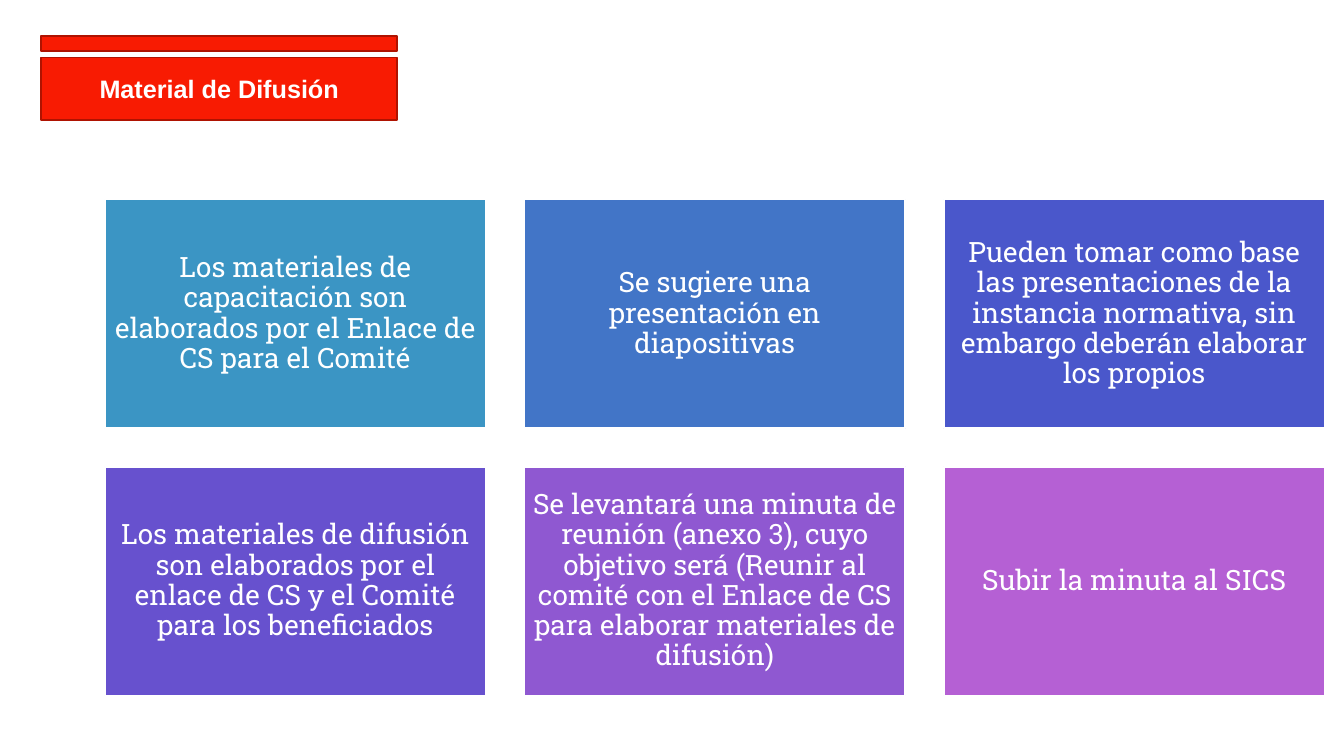
from pptx import Presentation
from pptx.dml.color import RGBColor
from pptx.enum import shapes, text
from pptx.util import Inches, Pt


def rgb(value):
    return RGBColor.from_string(value)


def add_box(slide, at, fill, line, content="", margin=0.1, spacing=1.0, **font):
    """Add a filled rectangle with centred text; at is left, top, width, height in inches."""
    sp = slide.shapes.add_shape(shapes.MSO_SHAPE.RECTANGLE, *map(Inches, at))
    sp.shadow.inherit = False
    sp.fill.solid()
    sp.fill.fore_color.rgb = rgb(fill)
    sp.line.color.rgb = rgb(line)
    sp.line.width = Pt(1.25)
    if content:
        tf = sp.text_frame
        tf.word_wrap = True
        tf.vertical_anchor = text.MSO_ANCHOR.MIDDLE
        for side in ("left", "top", "right", "bottom"):
            setattr(tf, f"margin_{side}", Inches(margin))
        p = tf.paragraphs[0]
        p.alignment = text.PP_ALIGN.CENTER
        p.line_spacing = spacing
        r = p.add_run()
        r.text = content
        r.font.color.rgb = rgb("FFFFFF")
        for name, value in font.items():
            setattr(r.font, name, value)


prs = Presentation()
prs.slide_width, prs.slide_height = Inches(13.33), Inches(7.5)
s = prs.slides.add_slide(prs.slide_layouts[6])

# Heading
RED, DARK_RED = "F81B02", "AF1301"
add_box(s, (0.41, 0.57, 3.53, 0.62), RED, DARK_RED, "Material de Difusión",
        name="Arial", size=Pt(18), bold=True)
add_box(s, (0.41, 0.36, 3.53, 0.15), RED, DARK_RED)

# Grid of cards, three to a row
cards = [
    ("3B95C4", "Los materiales de capacitación son elaborados por el Enlace de CS "
               "para el Comité"),
    ("4275C7", "Se sugiere una presentación en diapositivas"),
    ("4A57CB", "Pueden tomar como base las presentaciones de la instancia normativa, "
               "sin embargo deberán elaborar los propios"),
    ("6751CE", "Los materiales de difusión son elaborados por el enlace de CS y el "
               "Comité para los beneficiados"),
    ("8F58D1", "Se levantará una minuta de reunión (anexo 3), cuyo objetivo será "
               "(Reunir al comité con el Enlace de CS para elaborar materiales de "
               "difusión)"),
    ("B560D4", "Subir la minuta al SICS"),
]
COLUMNS, LEFT, TOP = 3, 1.04, 1.98
WIDTH, HEIGHT, GAP = 3.78, 2.27, 0.38
for i, (fill, content) in enumerate(cards):
    row, column = divmod(i, COLUMNS)
    at = (LEFT + column * (WIDTH + GAP), TOP + row * (HEIGHT + GAP), WIDTH, HEIGHT)
    add_box(s, at, fill, "FFFFFF", content, margin=0.08, spacing=0.9,
            name="Roboto Slab", size=Pt(20))

prs.save("out.pptx")
